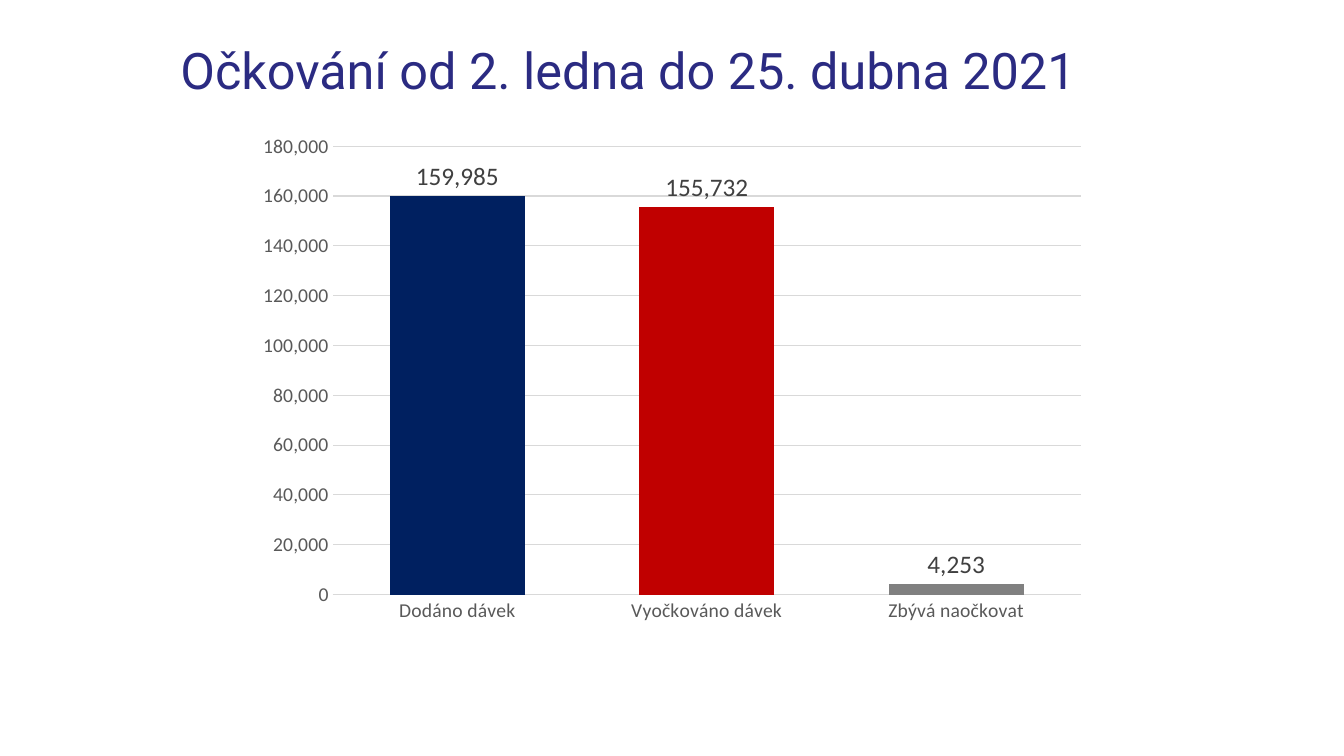
from dataclasses import dataclass

from pptx import Presentation, util as u
from pptx.chart.axis import _BaseAxis
from pptx.chart.data import CategoryChartData
from pptx.chart.series import BarSeries
from pptx.dml.color import RGBColor
from pptx.enum import chart as charts, text
from pptx.slide import Slide
from pptx.text.text import Font

SLIDE_WIDTH, SLIDE_HEIGHT = u.Inches(13.33), u.Inches(7.5)


@dataclass(frozen=True)
class Theme:
    heading_font: str = "Roboto"
    chart_font: str = "Calibri"
    heading: str = "2B2B82"
    axis_text: str = "595959"
    value_text: str = "404040"
    rule: str = "D9D9D9"
    heading_size: int = 36
    value_size: int = 18
    axis_size: int = 14


@dataclass(frozen=True)
class Area:
    left: float
    top: float
    width: float
    height: float

    def box(self) -> tuple[int, int, int, int]:
        return (
            int(self.left * SLIDE_WIDTH),
            int(self.top * SLIDE_HEIGHT),
            int(self.width * SLIDE_WIDTH),
            int(self.height * SLIDE_HEIGHT),
        )


@dataclass(frozen=True)
class DoseCount:
    label: str
    doses: int
    color: str


THEME = Theme()
HEADING_AREA = Area(0.1185, 0.0253, 0.802, 0.1427)
CHART_AREA = Area(0.183, 0.164, 0.6339, 0.6733)
DOSE_COUNTS = [
    DoseCount("Dodáno dávek", 159985, "002060"),
    DoseCount("Vyočkováno dávek", 155732, "C00000"),
    DoseCount("Zbývá naočkovat", 4253, "808080"),
]


def style_font(font: Font, name: str, size: int, color: str) -> None:
    font.name = name
    font.size = u.Pt(size)
    font.color.rgb = RGBColor.from_string(color)


def add_heading(slide: Slide, wording: str) -> None:
    frame = slide.shapes.add_textbox(*HEADING_AREA.box()).text_frame
    frame.word_wrap = True
    frame.vertical_anchor = text.MSO_ANCHOR.MIDDLE
    frame.margin_left = u.Inches(0.21)
    heading = frame.paragraphs[0]
    heading.line_spacing = 0.9
    run = heading.add_run()
    run.text = wording
    style_font(run.font, THEME.heading_font, THEME.heading_size, THEME.heading)


def style_axis(axis: _BaseAxis) -> None:
    axis.major_tick_mark = charts.XL_TICK_MARK.NONE
    axis.minor_tick_mark = charts.XL_TICK_MARK.NONE
    style_font(axis.tick_labels.font, THEME.chart_font, THEME.axis_size, THEME.axis_text)


def style_bars(bars: BarSeries) -> None:
    for index, count in enumerate(DOSE_COUNTS):
        fill = bars.points[index].format.fill
        fill.solid()
        fill.fore_color.rgb = RGBColor.from_string(count.color)
    labels = bars.data_labels
    labels.show_value = True
    labels.position = charts.XL_LABEL_POSITION.OUTSIDE_END
    labels.number_format = "#,##0"
    labels.number_format_is_linked = False
    style_font(labels.font, THEME.chart_font, THEME.value_size, THEME.value_text)


def add_dose_chart(slide: Slide) -> None:
    data = CategoryChartData(number_format="#,##0")
    data.categories = [count.label for count in DOSE_COUNTS]
    data.add_series("Series 1", [count.doses for count in DOSE_COUNTS])
    chart = slide.shapes.add_chart(
        charts.XL_CHART_TYPE.COLUMN_CLUSTERED, *CHART_AREA.box(), data
    ).chart
    chart.has_legend = False
    chart.has_title = False
    style_font(chart.font, THEME.chart_font, THEME.axis_size, THEME.axis_text)

    plot = chart.plots[0]
    plot.vary_by_categories = False
    plot.gap_width = 85
    plot.overlap = -24
    style_bars(plot.series[0])

    rule = RGBColor.from_string(THEME.rule)
    style_axis(chart.category_axis)
    baseline = chart.category_axis.format.line
    baseline.color.rgb = rule
    baseline.width = u.Pt(1)

    doses_axis = chart.value_axis
    style_axis(doses_axis)
    doses_axis.minimum_scale = 0
    doses_axis.maximum_scale = 180000
    doses_axis.major_unit = 20000
    doses_axis.format.line.fill.background()
    doses_axis.tick_labels.number_format = "#,##0"
    doses_axis.tick_labels.number_format_is_linked = False
    doses_axis.has_major_gridlines = True
    gridline = doses_axis.major_gridlines.format.line
    gridline.color.rgb = rule
    gridline.width = u.Pt(0.75)


def main() -> None:
    deck = Presentation()
    deck.slide_width, deck.slide_height = SLIDE_WIDTH, SLIDE_HEIGHT
    slide = deck.slides.add_slide(deck.slide_layouts[6])
    add_heading(slide, "Očkování od 2. ledna do 25. dubna 2021")
    add_dose_chart(slide)
    deck.save("out.pptx")


if __name__ == "__main__":
    main()
